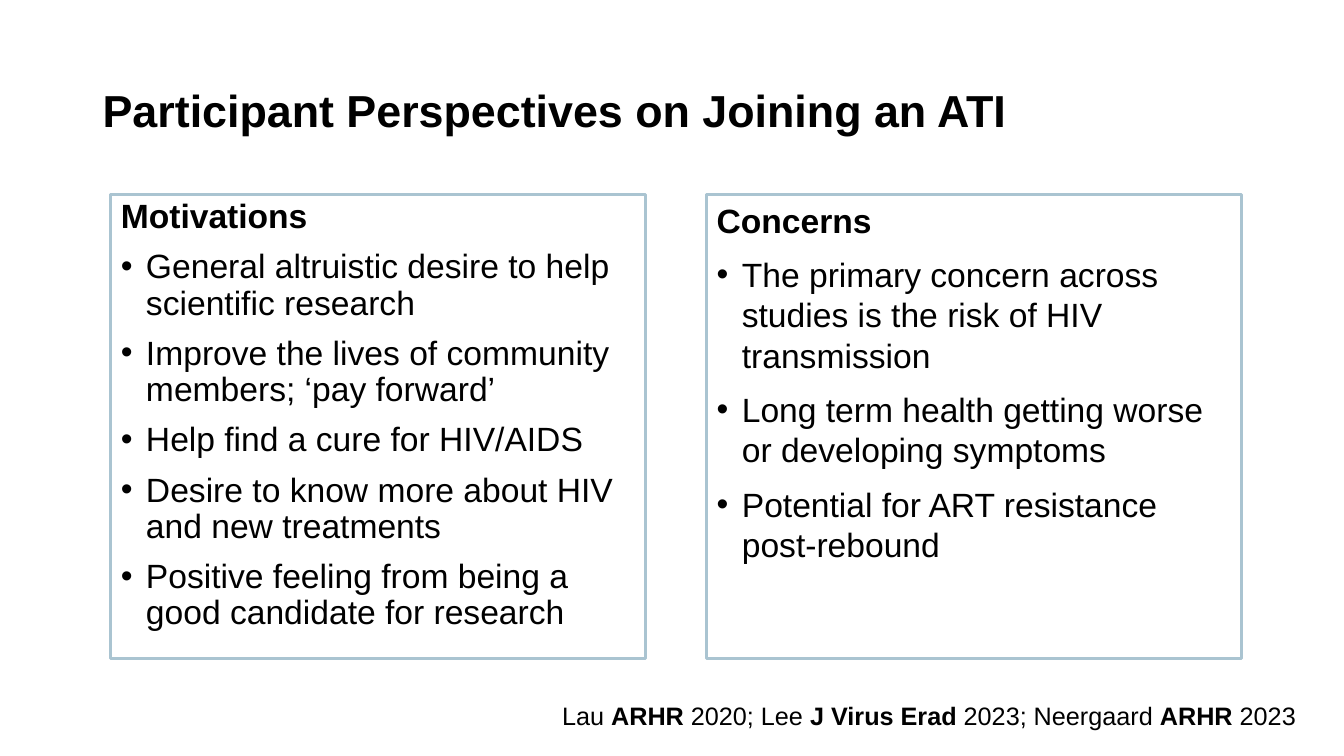
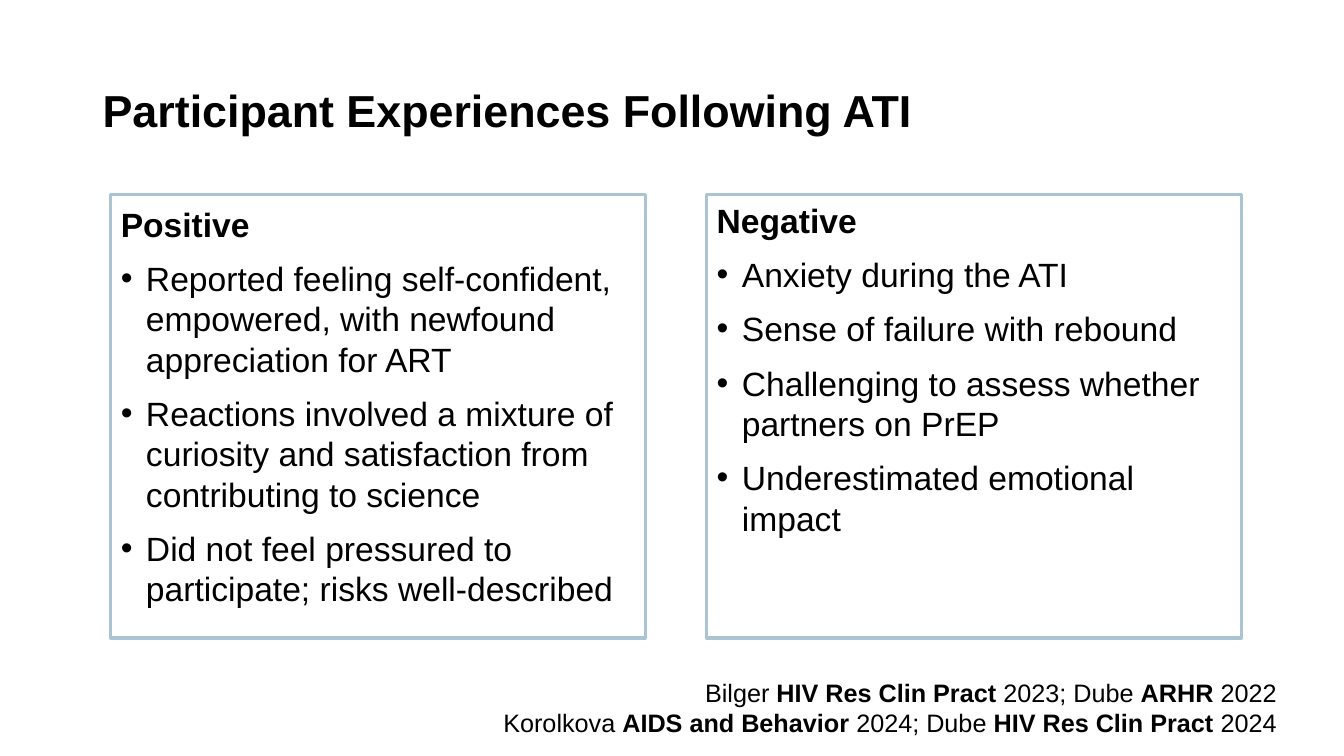
from dataclasses import dataclass

from lxml.etree import SubElement
from pptx import Presentation
from pptx.dml.color import RGBColor as Rgb
from pptx.enum.shapes import MSO_SHAPE as Shape
from pptx.enum.text import MSO_ANCHOR as Anchor, PP_ALIGN as Align
from pptx.oxml.ns import qn
from pptx.util import Inches, Pt

COLORS = {"text": "000000", "line": "AAC4D1", "back": "FFFFFF"}
FONT = "Arial"
LEFT, TOP, WIDTH, GAP = 1.1, 1.93, 5.3, 0.61
INDENT = 0.25


@dataclass
class Card:
    head: str
    items: list[str]
    pitch: float = 1.0
    lead: float = 1.0


@dataclass
class Source:
    lines: list[str]
    top: float
    right: float


@dataclass
class Page:
    title: str
    cards: list[Card]
    height: float
    source: Source


PAGES = [
    Page(
        "Participant Perspectives on Joining an ATI",
        [
            Card("Motivations", [
                "General altruistic desire to help scientific research",
                "Improve the lives of community members; ‘pay forward’",
                "Help find a cure for HIV/AIDS",
                "Desire to know more about HIV and new treatments",
                "Positive feeling from being a good candidate for research",
            ], pitch=0.9, lead=0.9),
            Card("Concerns", [
                "The primary concern across studies is the risk of HIV transmission",
                "Long term health getting worse or developing symptoms",
                "Potential for ART resistance post-rebound",
            ]),
        ],
        4.6,
        Source(["Lau *ARHR* 2020; Lee *J Virus Erad* 2023; Neergaard *ARHR* 2023"],
               6.9, 12.95),
    ),
    Page(
        "Participant Experiences Following ATI",
        [
            Card("Positive", [
                "Reported feeling self-confident, empowered, with newfound appreciation for ART",
                "Reactions involved a mixture of curiosity and satisfaction from contributing to science",
                "Did not feel pressured to participate; risks well-described",
            ], lead=1.1),
            Card("Negative", [
                "Anxiety during the ATI",
                "Sense of failure with rebound",
                "Challenging to assess whether partners on PrEP",
                "Underestimated emotional impact",
            ]),
        ],
        4.4,
        Source(["Bilger *HIV Res Clin Pract* 2023; Dube *ARHR* 2022",
                "Korolkova *AIDS and Behavior* 2024; Dube *HIV Res Clin Pract* 2024"],
               6.67, 12.76),
    ),
]


def color(name: str) -> Rgb:
    return Rgb.from_string(COLORS[name])


def style(para, size: float, bold: bool | None = None) -> None:
    font = para.font
    font.name, font.size, font.bold = FONT, Pt(size), bold
    font.color.rgb = color("text")


def lines(frame, count: int) -> list:
    return [frame.paragraphs[0]] + [frame.add_paragraph() for _ in range(count - 1)]


def bullet(para) -> None:
    props = para._p.get_or_add_pPr()
    props.set("marL", str(Inches(INDENT)))
    props.set("indent", str(-Inches(INDENT)))
    SubElement(props, qn("a:buFont")).set("typeface", FONT)
    SubElement(props, qn("a:buChar")).set("char", "•")


def text_box(slide, left: float, top: float, width: float, height: float):
    box = slide.shapes.add_textbox(
        Inches(left), Inches(top), Inches(width), Inches(height))
    box.text_frame.word_wrap = True
    return box.text_frame


def add_title(slide, text: str) -> None:
    frame = text_box(slide, 0.92, 0.4, 11.5, 1.45)
    frame.vertical_anchor = Anchor.MIDDLE
    para = frame.paragraphs[0]
    para.text, para.line_spacing = text, 0.9
    style(para, 32, True)


def add_card(slide, card: Card, left: float, height: float) -> None:
    box = slide.shapes.add_shape(
        Shape.RECTANGLE, Inches(left), Inches(TOP), Inches(WIDTH), Inches(height))
    box.shadow.inherit = False
    box.fill.background()
    box.line.color.rgb = color("line")
    box.line.width = Pt(2.25)
    frame = box.text_frame
    frame.word_wrap = True
    frame.vertical_anchor = Anchor.TOP
    texts = [card.head, *card.items]
    for row, (para, text) in enumerate(zip(lines(frame, len(texts)), texts)):
        para.text, para.alignment = text, Align.LEFT
        para.line_spacing = card.pitch if row else card.lead
        para.space_before = Pt(10)
        if row:
            bullet(para)
        style(para, 24, row == 0)


def add_source(slide, source: Source) -> None:
    left = 4.5
    count = len(source.lines)
    frame = text_box(slide, left, source.top, source.right - left, 0.1 + 0.3 * count)
    for para, text in zip(lines(frame, count), source.lines):
        para.alignment = Align.RIGHT
        style(para, 18)
        for part, words in enumerate(text.split("*")):
            run = para.add_run()
            run.text = words
            run.font.bold = part % 2 == 1


def add_page(deck, page: Page) -> None:
    slide = deck.slides.add_slide(deck.slide_layouts[6])
    fill = slide.background.fill
    fill.solid()
    fill.fore_color.rgb = color("back")
    add_title(slide, page.title)
    for col, card in enumerate(page.cards):
        add_card(slide, card, LEFT + col * (WIDTH + GAP), page.height)
    add_source(slide, page.source)


def main() -> None:
    deck = Presentation()
    deck.slide_width, deck.slide_height = Inches(13.33), Inches(7.5)
    for page in PAGES:
        add_page(deck, page)
    deck.save("out.pptx")


if __name__ == "__main__":
    main()
